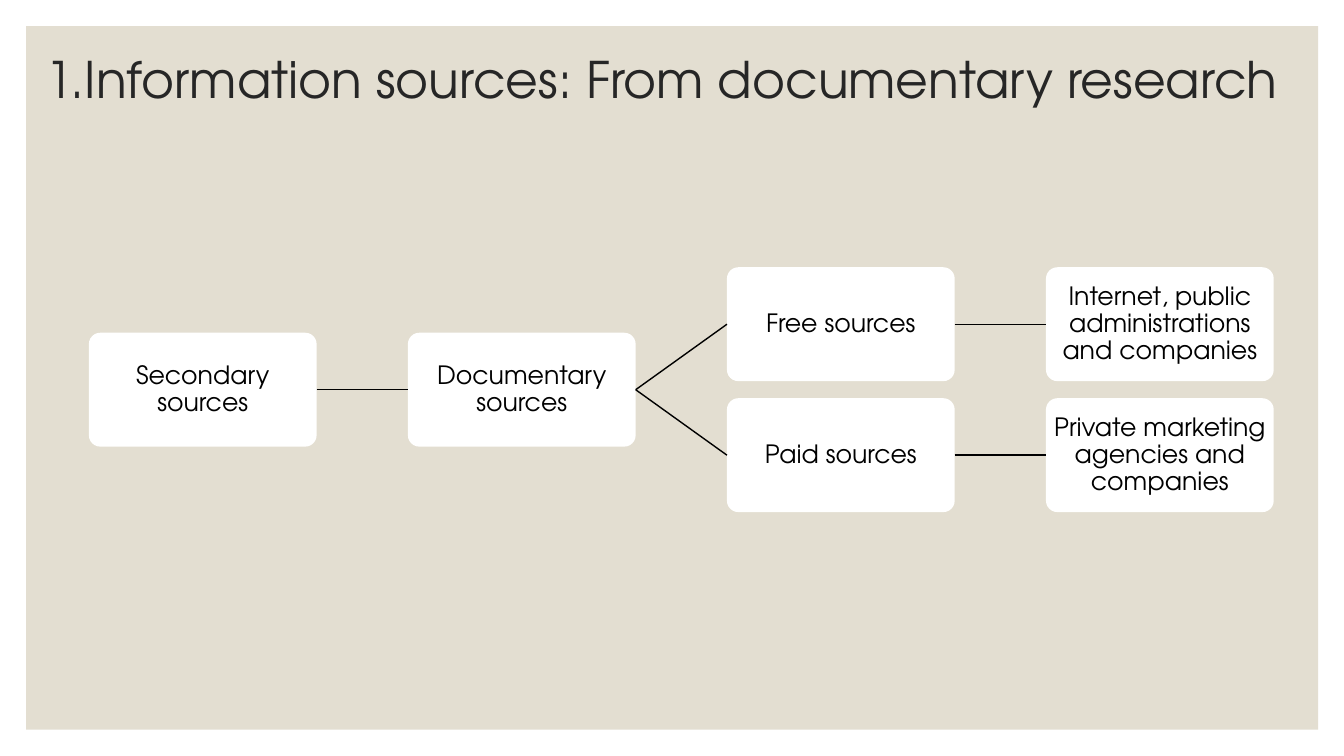
from lxml import etree
from pptx import Presentation
from pptx.dml.color import RGBColor
from pptx.enum.shapes import MSO_CONNECTOR, MSO_SHAPE
from pptx.enum.text import MSO_ANCHOR, PP_ALIGN
from pptx.oxml.ns import qn
from pptx.util import Cm, Pt

RECT = MSO_SHAPE.RECTANGLE
ROUNDED = MSO_SHAPE.ROUNDED_RECTANGLE
STRAIGHT = MSO_CONNECTOR.STRAIGHT
MIDDLE = MSO_ANCHOR.MIDDLE
LEFT, CENTER = PP_ALIGN.LEFT, PP_ALIGN.CENTER

WHITE = RGBColor(0xFF, 0xFF, 0xFF)
BLACK = RGBColor(0x00, 0x00, 0x00)
SAND = RGBColor(0xE3, 0xDE, 0xD1)
CHARCOAL = RGBColor(0x26, 0x26, 0x26)

TREE_LEFT, COLUMN_PITCH = 2.24, 8.04
TREE_MIDDLE, BRANCH_OFFSET = 9.82, 1.65
BOX_W, BOX_H = 5.74, 2.87
LEFT_SITE, RIGHT_SITE = 1, 3

NODES = {
    "secondary": (0, 0, "Secondary sources"),
    "documentary": (1, 0, "Documentary sources"),
    "free": (2, -1, "Free sources"),
    "public": (3, -1, "Internet, public administrations and companies"),
    "paid": (2, 1, "Paid sources"),
    "private": (3, 1, "Private marketing agencies and companies"),
}
LINKS = [
    ("secondary", "documentary"),
    ("documentary", "free"),
    ("free", "public"),
    ("documentary", "paid"),
    ("paid", "private"),
]


class SlideBuilder:
    """Draws the slide's elements in one shared style."""

    font = "TeX Gyre Adventor"

    def __init__(self, slide):
        self.shapes = slide.shapes

    def label(self, sp, text, size, color, align):
        tf = sp.text_frame
        tf.text = text
        tf.word_wrap = True
        tf.vertical_anchor = MIDDLE
        p = tf.paragraphs[0]
        p.alignment = align
        p.line_spacing = 0.9
        font = p.runs[0].font
        font.name = self.font
        font.size = Pt(size)
        font.color.rgb = color

    def block(self, kind, x, y, w, h, color):
        sp = self.shapes.add_shape(kind, Cm(x), Cm(y), Cm(w), Cm(h))
        sp.shadow.inherit = False
        sp.fill.solid()
        sp.fill.fore_color.rgb = color
        sp.line.fill.background()
        return sp

    def title(self, text, x, y, w, h):
        sp = self.shapes.add_textbox(Cm(x), Cm(y), Cm(w), Cm(h))
        self.label(sp, text, 36, CHARCOAL, LEFT)

    def node(self, column, branch, text):
        x = TREE_LEFT + column * COLUMN_PITCH
        y = TREE_MIDDLE + branch * BRANCH_OFFSET - BOX_H / 2
        sp = self.block(ROUNDED, x, y, BOX_W, BOX_H, WHITE)
        sp.adjustments[0] = 0.1
        self.label(sp, text, 18, BLACK, CENTER)
        tf = sp.text_frame
        tf.margin_left = tf.margin_right = Cm(0.02)
        tf.margin_top = tf.margin_bottom = Cm(0.02)
        return sp

    def link(self, parent, child):
        line = self.shapes.add_connector(STRAIGHT, 0, 0, 0, 0)
        line.begin_connect(parent, RIGHT_SITE)
        line.end_connect(child, LEFT_SITE)
        line.line.color.rgb = BLACK
        line.line.width = Pt(1)
        etree.SubElement(line._element.spPr, qn("a:effectLst"))


def main():
    prs = Presentation()
    prs.slide_width, prs.slide_height = Cm(33.87), Cm(19.05)
    s = SlideBuilder(prs.slides.add_slide(prs.slide_layouts[6]))
    s.block(RECT, 0.66, 0.66, 32.56, 17.73, SAND)
    s.title("1.Information sources: From documentary research", 0.91, 1.09, 32, 1.98)
    boxes = {name: s.node(*node) for name, node in NODES.items()}
    for parent, child in LINKS:
        s.link(boxes[parent], boxes[child])
    prs.save("out.pptx")


if __name__ == "__main__":
    main()
